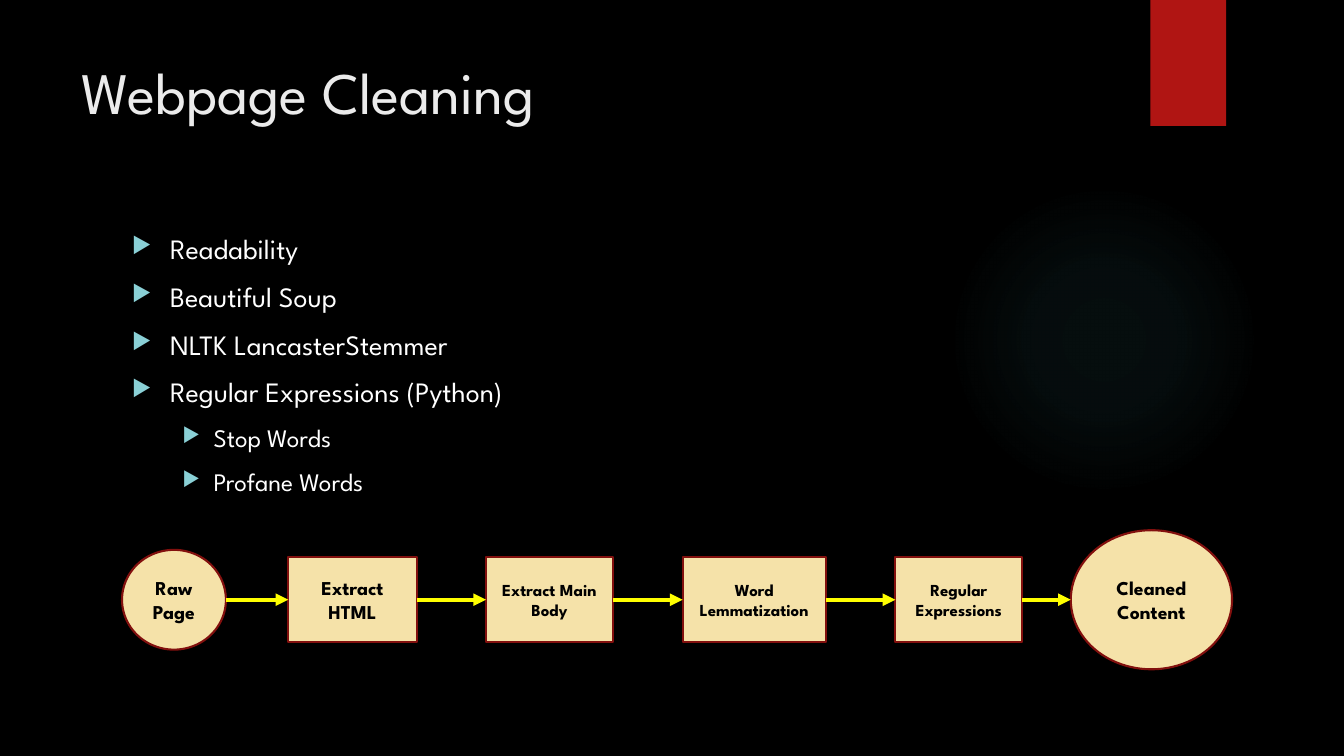
from dataclasses import dataclass
from itertools import pairwise

from lxml.etree import SubElement
from pptx import Presentation
from pptx.dml.color import RGBColor
from pptx.enum.shapes import MSO_CONNECTOR as Link, MSO_SHAPE as Preset
from pptx.enum.text import MSO_ANCHOR as Anchor, MSO_AUTO_SIZE as AutoSize, PP_ALIGN as Align
from pptx.oxml import parse_xml
from pptx.oxml.ns import nsdecls, qn
from pptx.util import Inches, Length, Pt

FONT = "League Spartan"
WIDTH, HEIGHT = Inches(13.33), Inches(7.5)
FLOW_ROW = 79.33  # centre line of the process, percent of the height


@dataclass
class Step:
    label: str
    left: float
    width: float
    height: float = 11.2
    size: int = 12
    outline: Preset = Preset.RECTANGLE


@dataclass
class Topic:
    text: str
    level: int = 0


@dataclass
class BulletStyle:
    size: int
    margin: float
    hanging: float


STEPS = [
    Step("Raw Page", 9.08, 7.73, 13.2, 14, Preset.OVAL),
    Step("Extract HTML", 21.45, 9.55, size=14),
    Step("Extract Main Body", 36.16, 9.45),
    Step("Word Lemmatization", 50.79, 10.65),
    Step("Regular Expressions", 66.62, 9.45),
    Step("Cleaned Content", 79.67, 12, 18.4, 14, Preset.OVAL),
]
TOPICS = [
    Topic("Readability"),
    Topic("Beautiful Soup"),
    Topic("NLTK LancasterStemmer"),
    Topic("Regular Expressions (Python)"),
    Topic("Stop Words", 1),
    Topic("Profane Words", 1),
]
BULLET_STYLES = [BulletStyle(20, 0.38, 0.38), BulletStyle(18, 0.81, 0.31)]


def color(value: str) -> RGBColor:
    return RGBColor.from_string(value)


def area(left: float, top: float, width: float, height: float) -> list[Length]:
    """Turn percentages of the slide into left, top, width and height."""
    shares = ((left, WIDTH), (top, HEIGHT), (width, WIDTH), (height, HEIGHT))
    return [Length(round(share * full / 100)) for share, full in shares]


def apply(target, formats: dict) -> None:
    for name, value in formats.items():
        setattr(target, name, value)


def write(paragraph, text: str, size: int, ink: str, bold: bool = False) -> None:
    run = paragraph.add_run()
    run.text = text
    apply(run.font, {"name": FONT, "size": Pt(size), "bold": bold})
    run.font.color.rgb = color(ink)


def add_block(slide, outline: Preset, place: list[Length], fill: str):
    block = slide.shapes.add_shape(outline, *place)
    block.shadow.inherit = False
    block.fill.solid()
    block.fill.fore_color.rgb = color(fill)
    block.line.fill.background()
    return block


def add_glow(slide) -> None:
    glow = add_block(slide, Preset.OVAL, area(70.58, 24.4, 23.1, 41.07), "50B9C1")
    stops = "".join(
        f'<a:gs pos="{pos}000"><a:srgbClr val="50B9C1"><a:alpha val="{alpha}000"/></a:srgbClr></a:gs>'
        for pos, alpha in ((0, 7), (36, 6), (69, 0))
    )
    gradient = parse_xml(
        f'<a:gradFill {nsdecls("a")} rotWithShape="1"><a:gsLst>{stops}</a:gsLst><a:path path="circle">'
        '<a:fillToRect l="50000" t="50000" r="50000" b="50000"/></a:path></a:gradFill>'
    )
    properties = glow.element.spPr
    properties.replace(properties.find(qn("a:solidFill")), gradient)


def add_bullet(paragraph, style: BulletStyle) -> None:
    properties = paragraph._p.get_or_add_pPr()
    properties.set("marL", str(Inches(style.margin)))
    properties.set("indent", str(-Inches(style.hanging)))
    SubElement(SubElement(properties, qn("a:buClr")), qn("a:srgbClr"), val="8AD0D6")
    SubElement(properties, qn("a:buSzPct"), val="80000")
    SubElement(properties, qn("a:buChar"), char="▶")


def add_topics(slide) -> None:
    frame = slide.shapes.add_textbox(*area(9.08, 30, 73.37, 61.2)).text_frame
    frame.word_wrap = True
    for index, topic in enumerate(TOPICS):
        paragraph = frame.add_paragraph() if index else frame.paragraphs[0]
        style = BULLET_STYLES[topic.level]
        add_bullet(paragraph, style)
        apply(paragraph, {"level": topic.level, "space_before": Pt(10 if index else 0)})
        write(paragraph, topic.text, style.size, "FFFFFF")


def add_step(slide, step: Step):
    place = area(step.left, FLOW_ROW - step.height / 2, step.width, step.height)
    block = add_block(slide, step.outline, place, "F5E2A9")
    block.line.color.rgb = color("82100E")
    block.line.width = Pt(1.5)
    apply(block.text_frame, {"word_wrap": True, "vertical_anchor": Anchor.MIDDLE})
    paragraph = block.text_frame.paragraphs[0]
    paragraph.alignment = Align.CENTER
    write(paragraph, step.label, step.size, "000000", bold=True)
    return block


def add_arrow(slide, source, target) -> None:
    row = round(FLOW_ROW * HEIGHT / 100)
    arrow = slide.shapes.add_connector(
        Link.STRAIGHT, source.left + source.width, row, target.left, row
    )
    if source.auto_shape_type == Preset.RECTANGLE:
        arrow.begin_connect(source, 3)
    if target.auto_shape_type == Preset.RECTANGLE:
        arrow.end_connect(target, 1)
    arrow.line.color.rgb = color("FFFF00")
    arrow.line.width = Pt(3)
    SubElement(arrow.line._get_or_add_ln(), qn("a:tailEnd"), type="triangle")
    SubElement(arrow.element.spPr, qn("a:effectLst"))


def add_title(slide) -> None:
    title = slide.shapes.title
    apply(title, dict(zip(("left", "top", "width", "height"), area(5.33, 6.67, 77.2, 20.4))))
    frame = title.text_frame
    apply(frame, {"word_wrap": True, "auto_size": AutoSize.NONE, "vertical_anchor": Anchor.TOP})
    frame.paragraphs[0].alignment = Align.LEFT
    write(frame.paragraphs[0], "Webpage Cleaning", 42, "EBEBEB")


def main() -> None:
    deck = Presentation()
    apply(deck, {"slide_width": WIDTH, "slide_height": HEIGHT})
    slide = deck.slides.add_slide(deck.slide_layouts[5])

    # Backdrop
    slide.background.fill.solid()
    slide.background.fill.fore_color.rgb = color("000000")
    add_glow(slide)
    add_block(slide, Preset.RECTANGLE, area(85.6, 0, 5.63, 16.67), "B01513")

    # Title and topics
    add_title(slide)
    add_topics(slide)

    # Cleaning process
    blocks = [add_step(slide, step) for step in STEPS]
    for source, target in pairwise(blocks):
        add_arrow(slide, source, target)

    deck.save("out.pptx")


if __name__ == "__main__":
    main()
